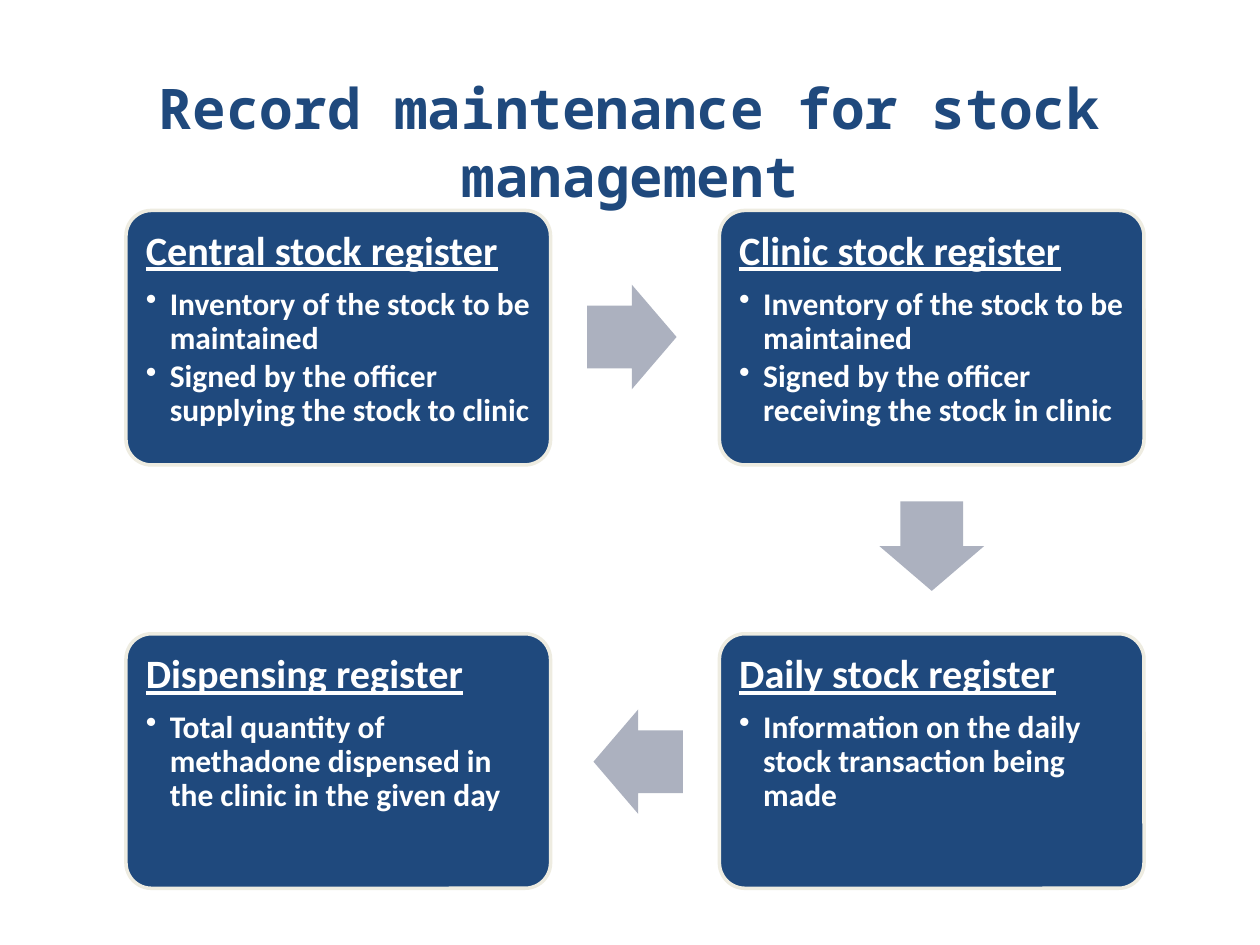
from dataclasses import dataclass

from lxml import etree
from pptx import Presentation
from pptx.dml.color import RGBColor
from pptx.enum import shapes, text
from pptx.oxml import ns
from pptx.util import Inches, Pt

COLOURS = {"navy": "1F497D", "cream": "EEECE1", "arrow": "ACB1BF", "white": "FFFFFF"}
CARD_LEFT, CARD_TOP = 1, 1.67
CARD_WIDTH, CARD_HEIGHT = 3.37, 2.02
COLUMN_STEP, ROW_STEP = 4.71, 3.36
ARROW_WIDTH, ARROW_HEIGHT = 0.71, 0.83
BULLET_INDENT = 0.19


@dataclass
class Register:
    column: int
    row: int
    heading: str
    points: list[str]


@dataclass
class Arrow:
    left: float
    top: float
    rotation: int


REGISTERS = [
    Register(0, 0, "Central stock register", [
        "Inventory of the stock to be maintained",
        "Signed by the officer supplying the stock to clinic"]),
    Register(1, 0, "Clinic stock register", [
        "Inventory of the stock to be maintained",
        "Signed by the officer receiving the stock in clinic"]),
    Register(1, 1, "Daily stock register", [
        "Information on the daily stock transaction being made"]),
    Register(0, 1, "Dispensing register", [
        "Total quantity of methadone dispensed in the clinic in the given day"]),
]
ARROWS = [Arrow(4.66, 2.26, 0), Arrow(7.04, 3.92, 90), Arrow(4.71, 5.63, 180)]


def colour(name: str) -> RGBColor:
    return RGBColor.from_string(COLOURS[name])


def add_bullet(paragraph) -> None:
    properties = paragraph._p.get_or_add_pPr()
    properties.set("marL", str(Inches(BULLET_INDENT)))
    properties.set("indent", str(-Inches(BULLET_INDENT)))
    etree.SubElement(properties, ns.qn("a:buChar")).set("char", "•")


def write(frame, content: str, *, size: float, fill: str, font: str = "Calibri",
          align=text.PP_ALIGN.LEFT, underline: bool = False, bullet: bool = False,
          line_spacing: float = 1.0, space_after: float = 0) -> None:
    """Fill the frame's empty first paragraph, or append a new one."""
    paragraph = frame.paragraphs[0]
    if paragraph.runs:
        paragraph = frame.add_paragraph()
    paragraph.alignment = align
    paragraph.line_spacing = line_spacing
    paragraph.space_after = Pt(space_after)
    if bullet:
        paragraph.level = 1
        add_bullet(paragraph)
    run = paragraph.add_run()
    run.text = content
    run.font.name = font
    run.font.size = Pt(size)
    run.font.bold = True
    run.font.underline = underline
    run.font.color.rgb = colour(fill)


def add_title(slide, content: str) -> None:
    box = slide.shapes.add_textbox(Inches(0.5), Inches(0.69), Inches(9), Inches(0.86))
    frame = box.text_frame
    frame.word_wrap = True
    frame.vertical_anchor = text.MSO_ANCHOR.MIDDLE
    write(frame, content, size=32, fill="navy", font="Noto Sans Mono",
          align=text.PP_ALIGN.CENTER)


def add_register(slide, register: Register) -> None:
    card = slide.shapes.add_shape(
        shapes.MSO_SHAPE.ROUNDED_RECTANGLE,
        Inches(CARD_LEFT + register.column * COLUMN_STEP),
        Inches(CARD_TOP + register.row * ROW_STEP),
        Inches(CARD_WIDTH), Inches(CARD_HEIGHT))
    card.adjustments[0] = 0.1
    card.shadow.inherit = False
    card.fill.solid()
    card.fill.fore_color.rgb = colour("navy")
    card.line.color.rgb = colour("cream")
    card.line.width = Pt(2)

    frame = card.text_frame
    frame.word_wrap = True
    frame.vertical_anchor = text.MSO_ANCHOR.TOP
    frame.margin_left = frame.margin_right = Inches(0.1)
    frame.margin_top = frame.margin_bottom = Inches(0.1)
    write(frame, register.heading, size=23, fill="white", underline=True,
          line_spacing=0.9, space_after=8)
    for point in register.points:
        write(frame, point, size=18, fill="white", bullet=True,
              line_spacing=0.9, space_after=2.7)


def add_arrow(slide, arrow: Arrow) -> None:
    shape = slide.shapes.add_shape(
        shapes.MSO_SHAPE.RIGHT_ARROW, Inches(arrow.left), Inches(arrow.top),
        Inches(ARROW_WIDTH), Inches(ARROW_HEIGHT))
    shape.adjustments[0] = 0.6
    shape.adjustments[1] = 0.5
    shape.rotation = arrow.rotation
    shape.shadow.inherit = False
    shape.fill.solid()
    shape.fill.fore_color.rgb = colour("arrow")
    shape.line.fill.background()


def main() -> None:
    presentation = Presentation()
    presentation.slide_width = Inches(10)
    presentation.slide_height = Inches(7.5)
    slide = presentation.slides.add_slide(presentation.slide_layouts[6])
    add_title(slide, "Record maintenance for stock management")
    for register in REGISTERS:
        add_register(slide, register)
    for arrow in ARROWS:
        add_arrow(slide, arrow)
    presentation.save("out.pptx")


if __name__ == "__main__":
    main()
